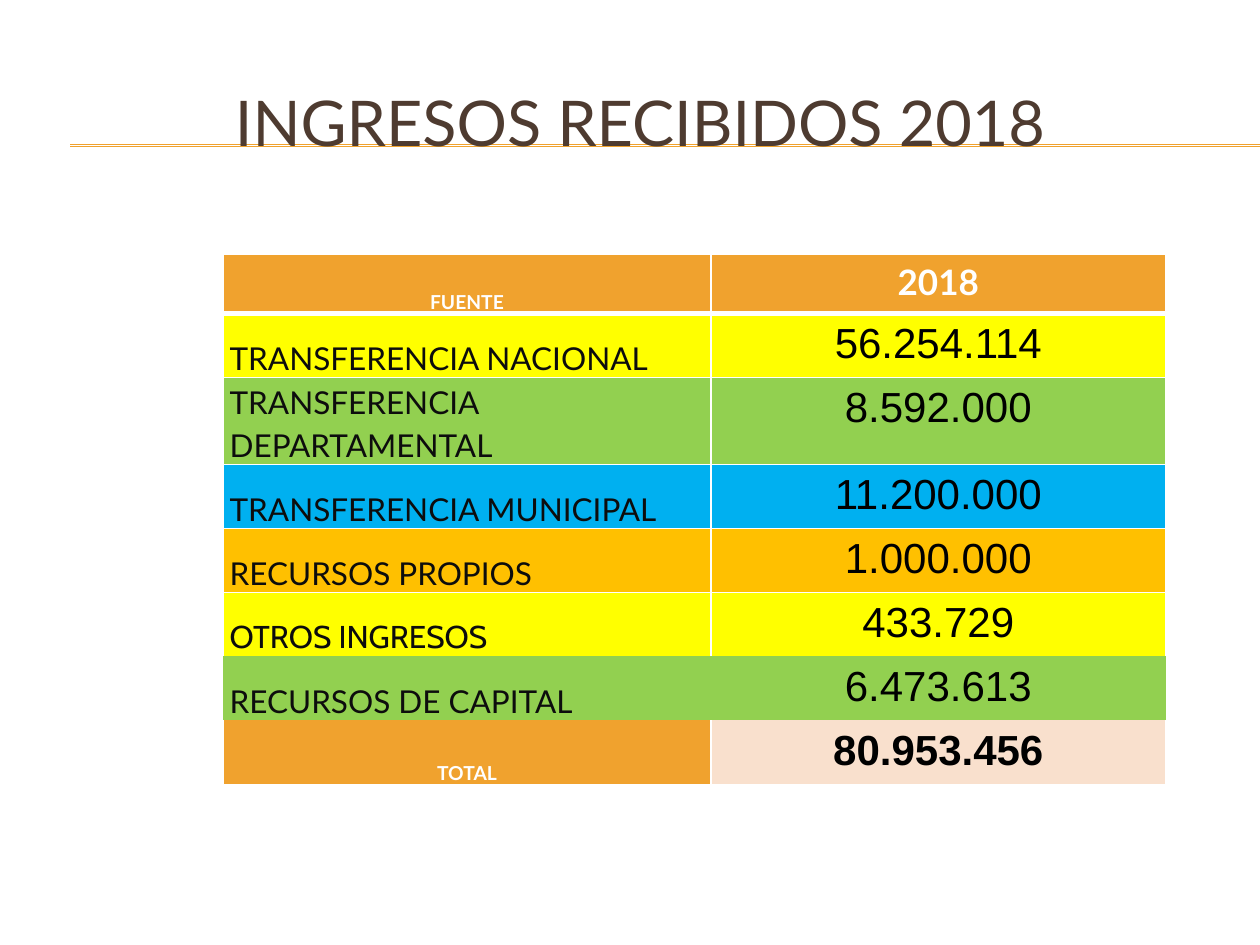
import pptx
import pptx.dml.color
import pptx.enum.shapes
import pptx.enum.text
import pptx.util
from pptx.oxml.ns import qn
from lxml import etree

Cm = pptx.util.Cm
Pt = pptx.util.Pt
ALIGN = pptx.enum.text.PP_ALIGN
ANCHOR = pptx.enum.text.MSO_ANCHOR

ORANGE, WHITE, BLACK = "F0A22E", "FFFFFF", "000000"
YELLOW, GREEN = "FFFF00", "92D050"

# source, amount, fill, font of the source name
INCOME = [
    ("TRANSFERENCIA NACIONAL", "56.254.114", YELLOW, "Lato"),
    ("TRANSFERENCIA DEPARTAMENTAL", "8.592.000", GREEN, "Lato"),
    ("TRANSFERENCIA MUNICIPAL", "11.200.000", "00B0F0", "Lato"),
    ("RECURSOS PROPIOS", "1.000.000", "FFC000", "Lato"),
    ("OTROS INGRESOS", "433.729", YELLOW, "Cabin"),
    ("RECURSOS DE CAPITAL", "6.473.613", GREEN, "Lato"),
]
ALL_SIDES = {"L": 1, "R": 1, "T": 1, "B": 1}
# border widths in points, for the rows that differ from ALL_SIDES
ROW_BORDERS = {
    0: {**ALL_SIDES, "B": 3},
    1: {**ALL_SIDES, "T": 3},
    5: {**ALL_SIDES, "B": 0},
    6: dict.fromkeys(ALL_SIDES, 0),
    7: {**ALL_SIDES, "T": 0},
}


def color(value):
    return pptx.dml.color.RGBColor.from_string(value)


def format_text(para, size, font, text_color, bold=False, align=ALIGN.CENTER):
    para.alignment = align
    for run in para.runs:
        run.font.size = Pt(size)
        run.font.name = font
        run.font.bold = bold
        run.font.color.rgb = color(text_color)


def set_borders(cell, widths):
    """Draw white borders; a width of 0 leaves the side without a line."""
    properties = cell._tc.get_or_add_tcPr()
    for side, width in widths.items():
        line = etree.SubElement(properties, qn("a:ln" + side), w=str(Pt(width)))
        if width:
            fill = etree.SubElement(line, qn("a:solidFill"))
            etree.SubElement(fill, qn("a:srgbClr"), val=WHITE)
        else:
            etree.SubElement(line, qn("a:noFill"))


def fill_cell(cell, text, fill, borders, anchor, **text_format):
    set_borders(cell, borders)
    cell.fill.solid()
    cell.fill.fore_color.rgb = color(fill)
    cell.margin_left = cell.margin_right = Cm(0.13)
    cell.margin_top = cell.margin_bottom = 0
    cell.vertical_anchor = anchor
    para = cell.text_frame.paragraphs[0]
    para.text = text
    para.line_spacing = 1.15
    format_text(para, **text_format)


def add_rule(slide, top):
    rule = slide.shapes.add_connector(
        pptx.enum.shapes.MSO_CONNECTOR.STRAIGHT,
        Cm(1.42), Cm(top), Cm(25.4), Cm(top))
    rule.line.color.rgb = color(ORANGE)
    rule.line.width = Pt(0.75)
    etree.SubElement(rule._element.spPr, qn("a:effectLst"))


def add_title(slide, text):
    title = slide.shapes.title
    title.left, title.top = Cm(0.84), Cm(1.27)
    title.width, title.height = Cm(24.13), Cm(2.34)
    title.text_frame.text = text
    title.text_frame.vertical_anchor = ANCHOR.MIDDLE
    format_text(title.text_frame.paragraphs[0], 36, "Lato", "4E3B30")
    slide.shapes._spTree.append(title._element)  # in front of the rules


def add_income_table(slide):
    label = dict(size=11, font="Lato", text_color=WHITE, bold=True)
    amount = dict(size=24, font="Arial", text_color=BLACK)
    rows = [("FUENTE", ORANGE, label, "2018", ORANGE, {**label, "size": 20})]
    for source, value, fill, font in INCOME:
        name = dict(size=18, font=font, text_color="0D0D0D", align=ALIGN.LEFT)
        rows.append((source, fill, name, value, fill, amount))
    rows.append(("TOTAL", ORANGE, label,
                 "80.953.456", "F9E0CD", {**amount, "bold": True}))

    table = slide.shapes.add_table(
        len(rows), 2, Cm(4.5), Cm(5.13), Cm(19), Cm(10.22)).table
    table.columns[0].width, table.columns[1].width = Cm(9.83), Cm(9.17)
    for index, (source, left_fill, left_format,
                value, right_fill, right_format) in enumerate(rows):
        table.rows[index].height = Cm(1.29 if index else 1.19)
        borders = ROW_BORDERS.get(index, ALL_SIDES)
        fill_cell(table.cell(index, 0), source, left_fill, borders,
                  ANCHOR.BOTTOM, **left_format)
        fill_cell(table.cell(index, 1), value, right_fill, borders,
                  ANCHOR.TOP, **right_format)


def main():
    deck = pptx.Presentation()
    deck.slide_width, deck.slide_height = Cm(25.4), Cm(19.05)
    slide = deck.slides.add_slide(deck.slide_layouts[5])
    for top in (2.92, 2.95):
        add_rule(slide, top)
    add_title(slide, "INGRESOS RECIBIDOS 2018")
    add_income_table(slide)
    deck.save("out.pptx")


if __name__ == "__main__":
    main()
